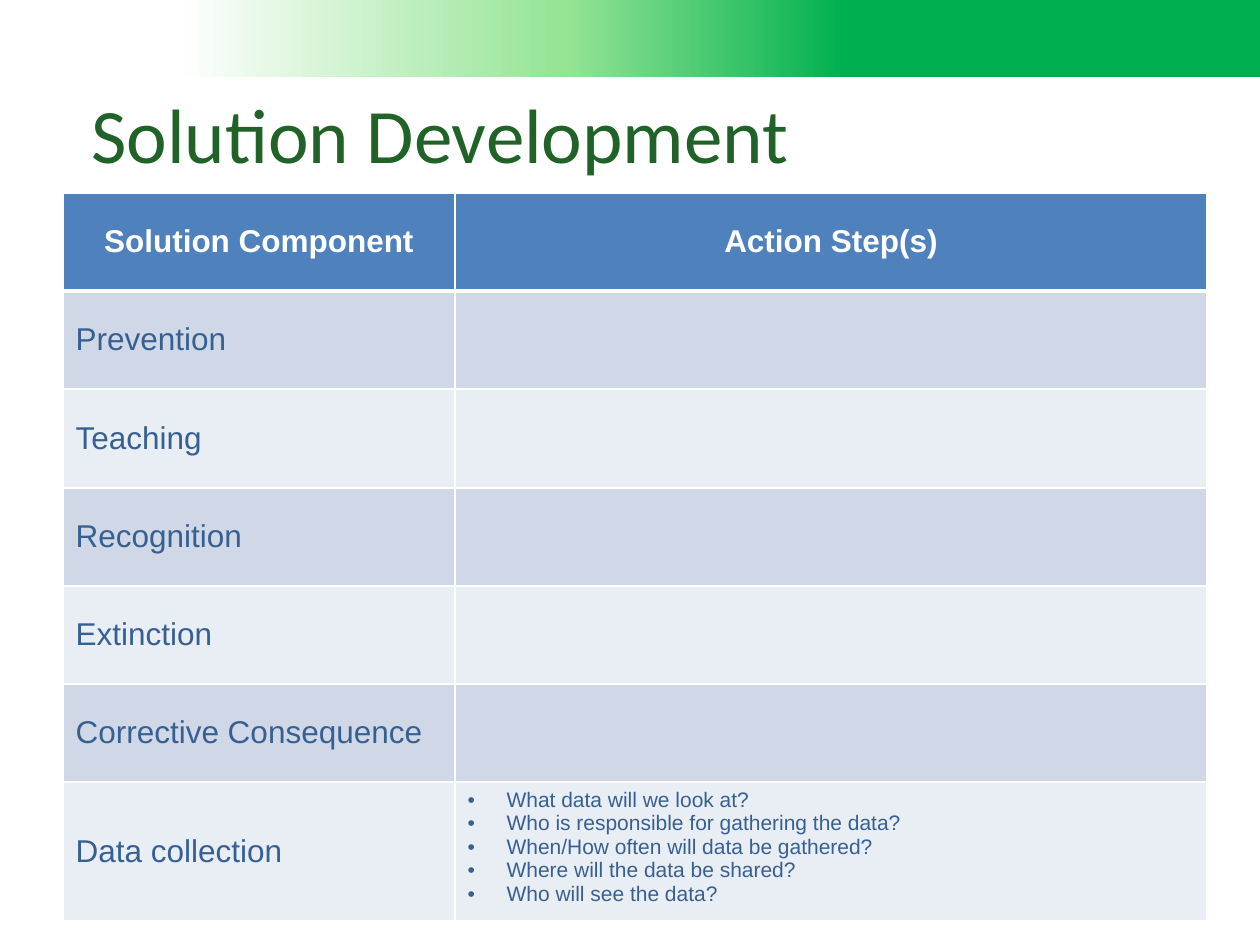
from lxml import etree
from pptx import Presentation
from pptx.dml.color import RGBColor
from pptx.enum.shapes import MSO_SHAPE
from pptx.enum.text import MSO_ANCHOR, PP_ALIGN
from pptx.oxml import parse_xml
from pptx.oxml.ns import nsdecls, qn
from pptx.util import Pt

PX = 914400 / 126

WHITE = RGBColor(0xFF, 0xFF, 0xFF)
GREEN = RGBColor(0x00, 0xB0, 0x50)
LIGHT_GREEN = RGBColor(0x94, 0xE4, 0x94)
DARK_GREEN = RGBColor(0x20, 0x62, 0x28)
HEADER_BLUE = RGBColor(0x4F, 0x81, 0xBD)
TEXT_BLUE = RGBColor(0x37, 0x60, 0x92)
BANDS = (RGBColor(0xD0, 0xD8, 0xE8), RGBColor(0xE9, 0xED, 0xF4))

HEADINGS = ("Solution Component", "Action Step(s)")
COMPONENTS = ("Prevention", "Teaching", "Recognition", "Extinction",
              "Corrective Consequence", "Data collection")
DATA_QUESTIONS = (
    "What data will we look at?",
    "Who is responsible for gathering the data?",
    "When/How often will data be gathered?",
    "Where will the data be shared?",
    "Who will see the data?",
)
COLUMN_WIDTHS = (392, 752)
ROW_HEIGHTS = (98, 98, 99, 98, 98, 98, 130)


def px(*lengths):
    return [round(length * PX) for length in lengths]


def style(paragraph, size, color, font_name="Arial", bold=False):
    font = paragraph.font if not paragraph.runs else paragraph.runs[0].font
    font.name = font_name
    font.size = Pt(size)
    font.bold = bold
    font.color.rgb = color


def add_gradient_band(slide):
    band = slide.shapes.add_shape(MSO_SHAPE.RECTANGLE, *px(0, 0, 1260, 77))
    band.rotation = 180
    band.shadow.inherit = False
    band.line.fill.background()
    band.fill.gradient()
    band.fill.gradient_angle = 0
    stops = band.fill._fill._gradFill.find(qn("a:gsLst"))
    for stop in list(stops):
        stops.remove(stop)
    for percent, color in ((33, GREEN), (55, LIGHT_GREEN), (86, WHITE)):
        stops.append(parse_xml(
            f'<a:gs {nsdecls("a")} pos="{percent * 1000}">'
            f'<a:srgbClr val="{color}"/></a:gs>'))


def add_title(slide, text):
    box = slide.shapes.add_textbox(*px(0, 76, 1239, 113))
    frame = box.text_frame
    frame.word_wrap = True
    frame.vertical_anchor = MSO_ANCHOR.MIDDLE
    frame.text = text
    paragraph = frame.paragraphs[0]
    paragraph._p.get_or_add_pPr().set("marL", str(px(79)[0]))
    style(paragraph, 44, DARK_GREEN, "Calibri")


def format_cell(cell, fill, bottom_width=1):
    """Draw white borders first, since the schema wants them before the fill."""
    properties = cell._tc.get_or_add_tcPr()
    for side, width in (("L", 1), ("R", 1), ("T", 1), ("B", bottom_width)):
        line = etree.SubElement(properties, qn(f"a:ln{side}"), w=str(Pt(width)))
        solid = etree.SubElement(line, qn("a:solidFill"))
        etree.SubElement(solid, qn("a:srgbClr"), val=str(WHITE))
    cell.fill.solid()
    cell.fill.fore_color.rgb = fill


def write_label(cell, text, color, bold=False, align=PP_ALIGN.LEFT):
    cell.vertical_anchor = MSO_ANCHOR.MIDDLE
    cell.text_frame.text = text
    paragraph = cell.text_frame.paragraphs[0]
    paragraph.alignment = align
    style(paragraph, 18, color, bold=bold)


def write_bullets(cell, lines):
    cell.text_frame.text = "\n".join(lines)
    indent = px(39)[0]
    for paragraph in cell.text_frame.paragraphs:
        properties = paragraph._p.get_or_add_pPr()
        properties.set("marL", str(indent))
        properties.set("indent", str(-indent))
        etree.SubElement(properties, qn("a:buFont"), typeface="Arial")
        etree.SubElement(properties, qn("a:buChar"), char="•")
        style(paragraph, 12, TEXT_BLUE)


def add_solution_table(slide):
    table = slide.shapes.add_table(
        len(ROW_HEIGHTS), len(COLUMN_WIDTHS),
        *px(63, 193, sum(COLUMN_WIDTHS), sum(ROW_HEIGHTS))).table
    for column, width in zip(table.columns, px(*COLUMN_WIDTHS)):
        column.width = width
    for row, height in zip(table.rows, px(*ROW_HEIGHTS)):
        row.height = height

    for cell, heading in zip(table.rows[0].cells, HEADINGS):
        format_cell(cell, HEADER_BLUE, bottom_width=3)
        write_label(cell, heading, WHITE, True, PP_ALIGN.CENTER)
    for index, component in enumerate(COMPONENTS):
        cells = table.rows[index + 1].cells
        for cell in cells:
            format_cell(cell, BANDS[index % 2])
        write_label(cells[0], component, TEXT_BLUE)
    write_bullets(table.cell(len(COMPONENTS), 1), DATA_QUESTIONS)


def main():
    presentation = Presentation()
    presentation.slide_width, presentation.slide_height = px(1260, 945)
    slide = presentation.slides.add_slide(presentation.slide_layouts[6])
    add_gradient_band(slide)
    add_title(slide, "Solution Development")
    add_solution_table(slide)
    presentation.save("out.pptx")


if __name__ == "__main__":
    main()
